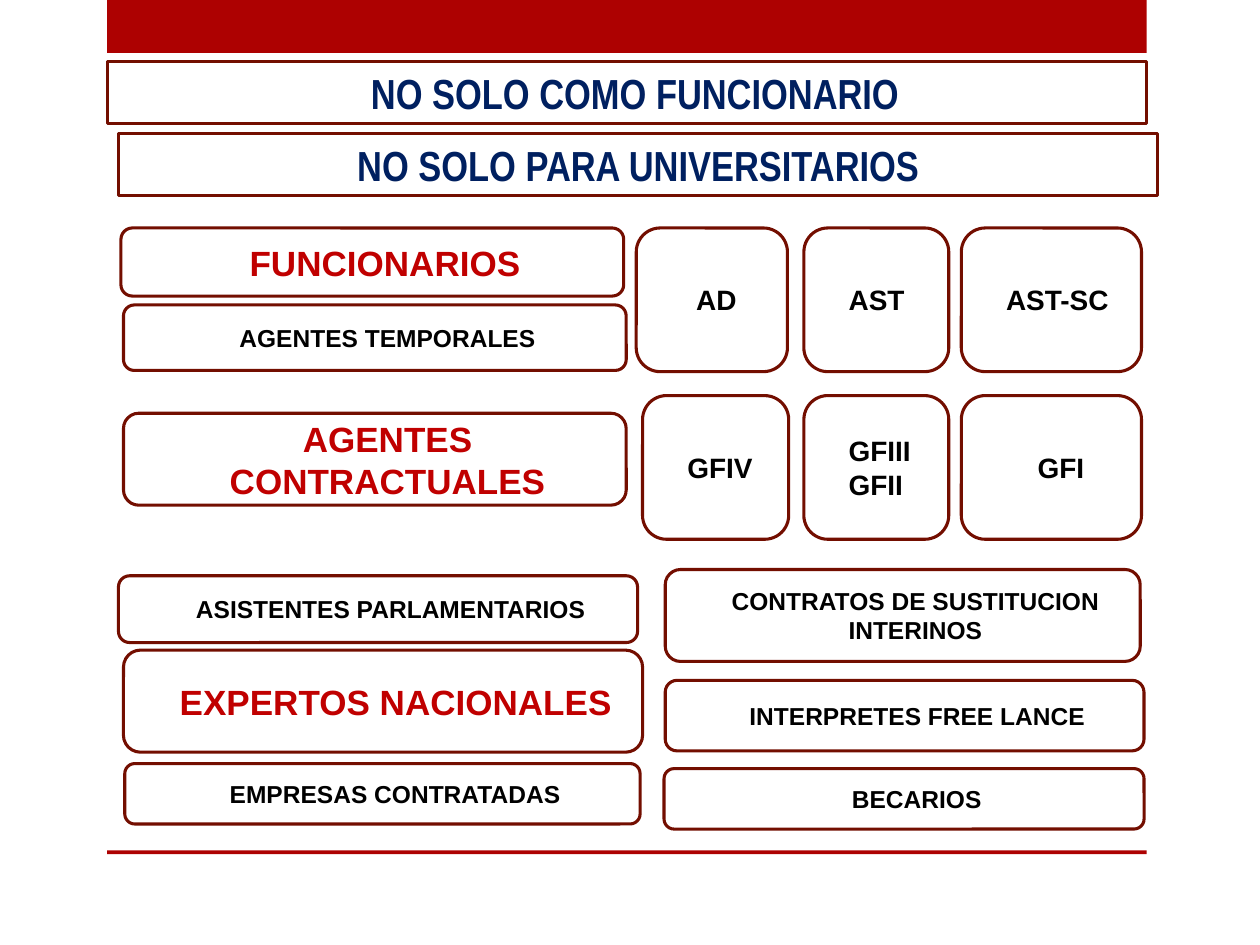
from pptx import Presentation
from pptx.dml.color import RGBColor
from pptx.enum.shapes import MSO_SHAPE as Preset
from pptx.enum.text import MSO_ANCHOR as Anchor, MSO_AUTO_SIZE as AutoSize, PP_ALIGN as Align
from pptx.util import Inches, Pt

THEME = {
    "band": RGBColor(0xAD, 0x01, 0x01),
    "border": RGBColor(0x73, 0x0E, 0x00),
    "fill": RGBColor(0xFF, 0xFF, 0xFF),
    "border_width": Pt(1.75),
    # Text style: font, size, colour, alignment
    "heading": ("Arial Narrow", 24, RGBColor(0x00, 0x20, 0x60), Align.CENTER),
    "major": ("Arial", 20, RGBColor(0xC0, 0x00, 0x00), Align.CENTER),
    "minor": ("Arial", 14, RGBColor(0, 0, 0), Align.CENTER),
    "grade": ("Arial", 16, RGBColor(0, 0, 0), Align.LEFT),
}
INSET, INDENT = 0.1, 0.2

BAND_LEFT, BAND_WIDTH = 0.85, 8.25
BANDS = [(0, 0.42), (6.75, 0.03)]  # top, height
HEADING_HEIGHT = 0.49
TITLE = ("NO SOLO COMO FUNCIONARIO", 0.85, 0.49)
SUBTITLE = ("NO SOLO PARA UNIVERSITARIOS", 0.94, 1.06)

# Text, style, left, top, width, height
CATEGORIES = [
    ("FUNCIONARIOS", "major", 0.96, 1.81, 3.99, 0.54),
    ("AGENTES TEMPORALES", "minor", 0.98, 2.42, 3.99, 0.52),
    ("AGENTES CONTRACTUALES", "major", 0.98, 3.28, 3.99, 0.73),
    ("ASISTENTES PARLAMENTARIOS", "minor", 0.94, 4.57, 4.12, 0.53),
    ("EXPERTOS NACIONALES", "major", 0.98, 5.16, 4.12, 0.81),
    ("EMPRESAS CONTRATADAS", "minor", 0.99, 6.06, 4.09, 0.48),
    ("CONTRATOS DE SUSTITUCION INTERINOS", "minor", 5.28, 4.52, 3.77, 0.73),
    ("INTERPRETES FREE LANCE", "minor", 5.28, 5.4, 3.8, 0.56),
    ("BECARIOS", "minor", 5.27, 6.1, 3.81, 0.48),
]

# Each row: top, then text, left, width and extra indent of each grade
GRADE_HEIGHT = 1.14
GRADE_ROWS = [
    (1.81, [("AD", 5.05, 1.2, 0.12), ("AST", 6.38, 1.15, 0), ("AST-SC", 7.63, 1.43, 0)]),
    (3.14, [("GFIV", 5.1, 1.16, 0), ("GFIII\nGFII", 6.38, 1.15, 0), ("GFI", 7.63, 1.43, 0.25)]),
]


def format_box(shape, text, style, indent=0):
    font_name, size, color, alignment = THEME[style]
    shape.fill.solid()
    shape.fill.fore_color.rgb = THEME["fill"]
    shape.line.color.rgb = THEME["border"]
    shape.line.width = THEME["border_width"]
    frame = shape.text_frame
    frame.text = text
    frame.word_wrap = True
    frame.auto_size = AutoSize.NONE
    frame.vertical_anchor = Anchor.MIDDLE
    frame.margin_left = Inches(INSET + indent)
    frame.margin_right = Inches(INSET)
    for paragraph in frame.paragraphs:
        paragraph.alignment = alignment
        paragraph.font.name = font_name
        paragraph.font.size = Pt(size)
        paragraph.font.bold = True
        paragraph.font.color.rgb = color


def add_shape(slide, preset, *place):
    shape = slide.shapes.add_shape(preset, *map(Inches, place))
    shape.shadow.inherit = False
    return shape


def main():
    presentation = Presentation()
    presentation.slide_width, presentation.slide_height = Inches(10), Inches(7.5)
    slide = presentation.slides.add_slide(presentation.slide_layouts[5])

    for top, height in BANDS:
        band = add_shape(slide, Preset.RECTANGLE, BAND_LEFT, top, BAND_WIDTH, height)
        band.fill.solid()
        band.fill.fore_color.rgb = THEME["band"]
        band.line.fill.background()

    text, left, top = TITLE
    title = slide.shapes.title
    title.left, title.top = Inches(left), Inches(top)
    title.width, title.height = Inches(BAND_WIDTH), Inches(HEADING_HEIGHT)
    format_box(title, text, "heading", indent=0.13)

    text, left, top = SUBTITLE
    subtitle = add_shape(slide, Preset.RECTANGLE, left, top, BAND_WIDTH, HEADING_HEIGHT)
    format_box(subtitle, text, "heading")

    for text, style, *place in CATEGORIES:
        format_box(add_shape(slide, Preset.ROUNDED_RECTANGLE, *place), text, style, INDENT)

    for top, grades in GRADE_ROWS:
        for text, left, width, extra in grades:
            box = add_shape(slide, Preset.ROUNDED_RECTANGLE, left, top, width, GRADE_HEIGHT)
            format_box(box, text, "grade", INDENT + extra)

    presentation.save("out.pptx")


if __name__ == "__main__":
    main()
